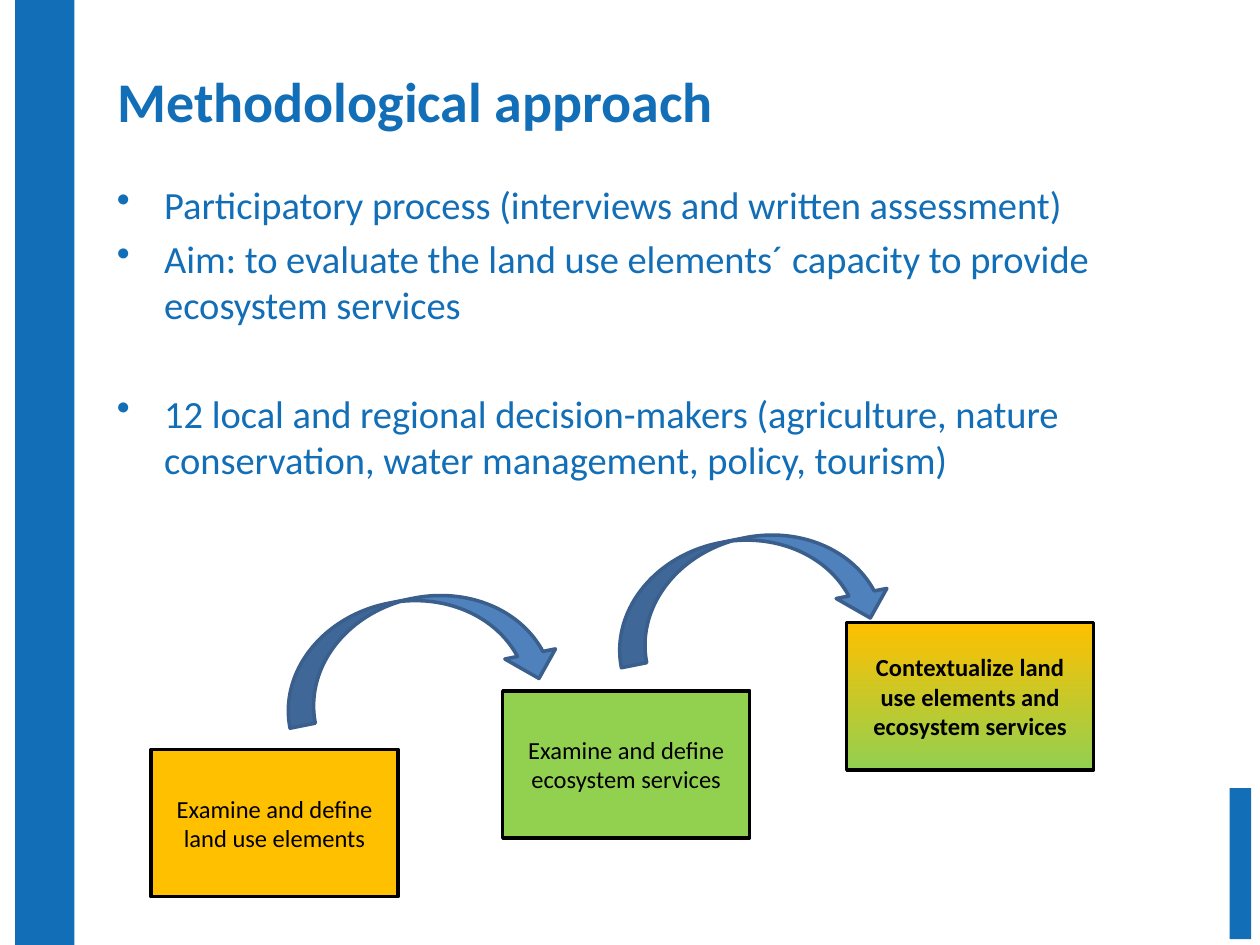
"""Build the methodological approach slide with three stepped boxes."""
import pptx
import pptx.util
import pptx.dml.color
import pptx.enum.shapes
import pptx.enum.text
import pptx.oxml

COLORS = {"blue": "126EB6", "amber": "FFC000", "green": "92D050",
          "arrow": "4F81BD", "arrow_line": "3A5F8C", "black": "000000"}
Pt = pptx.util.Pt
MSO = pptx.enum.shapes.MSO_SHAPE
ALIGN = pptx.enum.text.PP_ALIGN
MIDDLE = pptx.enum.text.MSO_ANCHOR.MIDDLE

prs = pptx.Presentation()
prs.slide_width = pptx.util.Inches(10)
prs.slide_height = pptx.util.Inches(7.5)
W, H = prs.slide_width, prs.slide_height
s = prs.slides.add_slide(prs.slide_layouts[5])


def add_shape(kind, box, fill, line=None):
    """Add a filled shape; box is in percent of the slide's size."""
    x, y, w, h = box
    sp = s.shapes.add_shape(kind, int(W * x / 100), int(H * y / 100),
                            int(W * w / 100), int(H * h / 100))
    sp.shadow.inherit = False
    if len(fill) == 1:
        sp.fill.solid()
        sp.fill.fore_color.rgb = pptx.dml.color.RGBColor.from_string(COLORS[fill[0]])
    else:
        sp.fill.gradient()
        sp.fill.gradient_angle = 270
        for stop, name in zip(sp.fill.gradient_stops, fill):
            stop.color.rgb = pptx.dml.color.RGBColor.from_string(COLORS[name])
    if line:
        sp.line.color.rgb = pptx.dml.color.RGBColor.from_string(COLORS[line])
        sp.line.width = Pt(2)
    else:
        sp.line.fill.background()
    return sp


def style(p, size, color, bold=False):
    """Format every run of a paragraph."""
    for r in p.runs:
        r.font.name = "Calibri"
        r.font.size = Pt(size)
        r.font.bold = bold
        r.font.color.rgb = pptx.dml.color.RGBColor.from_string(COLORS[color])


for bar in [(1.2, 0, 4.7, 100), (97.6, 83.4, 1.7, 16)]:
    add_shape(MSO.RECTANGLE, bar, ["blue"])

title = s.shapes.title
title.left, title.top = int(W * 0.083), int(H * 0.048)
title.width, title.height = int(W * 0.882), int(H * 0.115)
tf = title.text_frame
tf.text = "Methodological approach"
tf.vertical_anchor = MIDDLE
tf.auto_size = pptx.enum.text.MSO_AUTO_SIZE.NONE
tf.paragraphs[0].alignment = ALIGN.LEFT
style(tf.paragraphs[0], 32, "blue", True)

bullets = [
    ("Participatory process (interviews and written assessment)", 0),
    ("Aim: to evaluate the land use elements´ capacity to provide ecosystem services", 4.4),
    ("12 local and regional decision-makers (agriculture, nature conservation, "
     "water management, policy, tourism)", 35.6),
]
body = s.shapes.add_textbox(int(W * 0.083), int(H * 0.185), int(W * 0.883), int(H * 0.47))
tf = body.text_frame
tf.word_wrap = True
for i, (text, gap) in enumerate(bullets):
    p = tf.paragraphs[0] if i == 0 else tf.add_paragraph()
    p.text = text
    p.space_before = Pt(gap)
    pPr = p._p.get_or_add_pPr()
    pPr.set("marL", str(Pt(27)))
    pPr.set("indent", str(-Pt(27)))
    bullet = pptx.oxml.parse_xml(
        '<a:buChar xmlns:a="http://schemas.openxmlformats.org/drawingml/2006/main" char="•"/>')
    pPr.append(bullet)
    style(p, 22, "blue")

steps = [
    ("Examine and define land use elements", 12, 79.3, ["amber"], False),
    ("Examine and define ecosystem services", 39.9, 73.1, ["green"], False),
    ("Contextualize land use elements and ecosystem services", 67.2, 65.9,
     ["amber", "green"], True),
]
for text, x, y, fill, bold in steps:
    sp = add_shape(MSO.RECTANGLE, (x, y, 19.6, 15.6), fill, "black")
    tf = sp.text_frame
    tf.word_wrap = True
    tf.vertical_anchor = MIDDLE
    tf.text = text
    tf.paragraphs[0].alignment = ALIGN.CENTER
    style(tf.paragraphs[0], 14, "black", bold)

for x, y in [(29, 54), (55.3, 47.6)]:
    sp = add_shape(MSO.CURVED_LEFT_ARROW, (x, y, 8.2, 29.6), ["arrow"], "arrow_line")
    sp.rotation = 258.7

prs.save("out.pptx")
